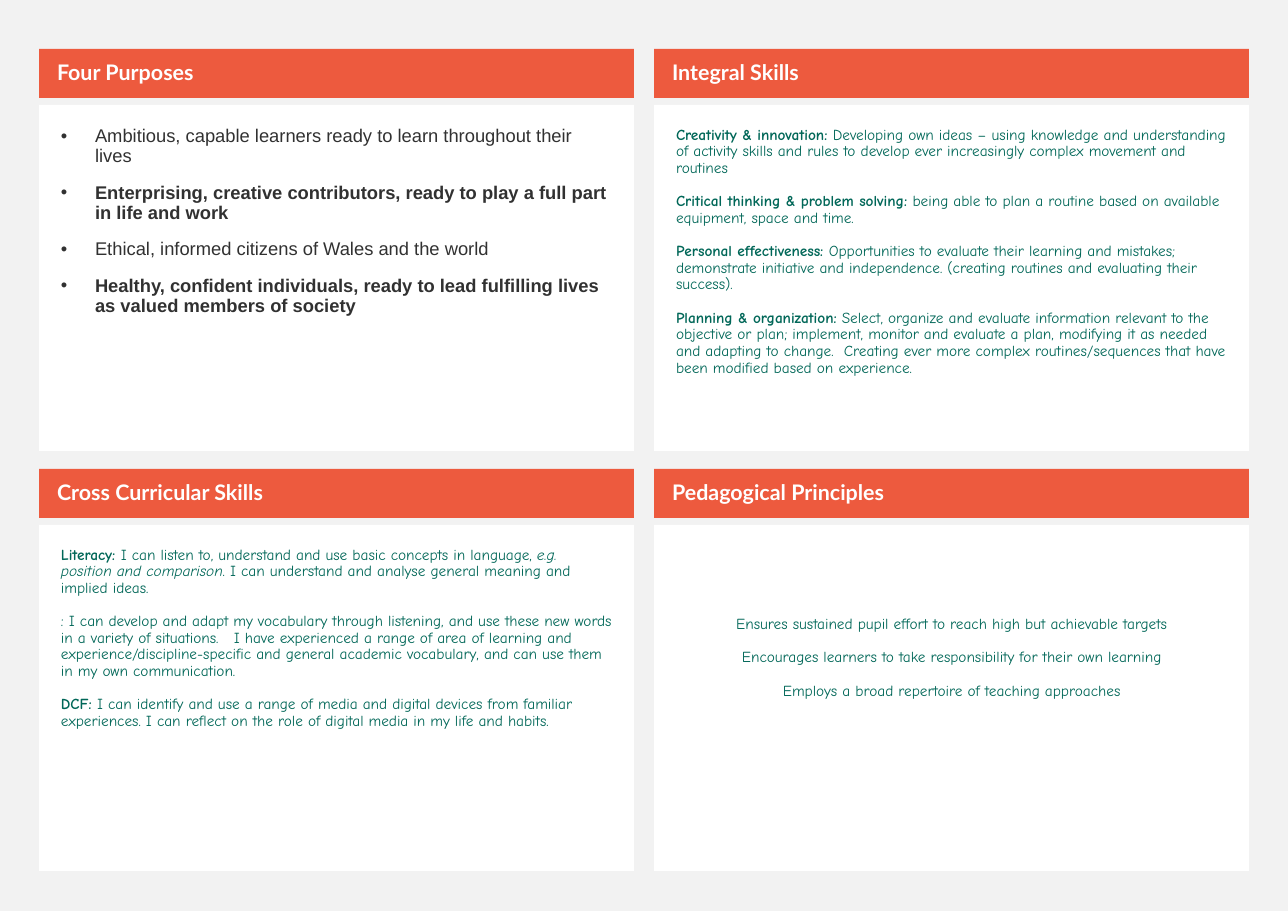
from dataclasses import dataclass

import lxml.etree
import pptx
import pptx.dml.color
import pptx.enum.text
import pptx.oxml.ns
import pptx.util

SCALE = 8298  # EMU in one px
WIDTH, HEIGHT = 1288, 911

# Panel grid, in px
COLS = (39, 654)
ROWS = (49, 469)
WIDE = 595
BAR = 49
DROP = 56
DEEP = 346
PAD = 22
INDENT = 34

ALIGN = pptx.enum.text.PP_ALIGN
ANCHOR = pptx.enum.text.MSO_ANCHOR


@dataclass(frozen=True)
class Style:
    face: str
    size: int
    ink: str
    fill: str


class Theme:
    back = "F2F2F2"
    head = Style("Lato", 14, "FFFFFF", "ED5A3E")
    plain = Style("Arial", 12, "313131", "FFFFFF")
    comic = Style("Comic Neue", 10, "006758", "FFFFFF")
    lead = 0.9
    gap = 11


# Each paragraph is a list of (text, mark); mark is "b", "i" or ""
PURPOSES = [
    [("Ambitious, capable learners ready to learn throughout their lives", "")],
    [("Enterprising, creative contributors, ready to play a full part in life and work", "b")],
    [("Ethical, informed citizens of Wales and the world", "")],
    [("Healthy, confident individuals, ready to lead fulfilling lives as valued members of society", "b")],
]
INTEGRAL = [
    [("Creativity & innovation: ", "b"),
     ("Developing own ideas – using knowledge and understanding of activity skills and rules "
      "to develop ever increasingly complex movement and routines", "")],
    [("Critical thinking & problem solving: ", "b"),
     ("being able to plan a routine based on available equipment, space and time.", "")],
    [("Personal effectiveness: ", "b"),
     ("Opportunities to evaluate their learning and mistakes; demonstrate initiative and "
      "independence. (creating routines and evaluating their success).", "")],
    [("Planning & organization:", "b"),
     (" Select, organize and evaluate information relevant to the objective or plan; implement, "
      "monitor and evaluate a plan, modifying it as needed and adapting to change.  Creating "
      "ever more complex routines/sequences that have been modified based on experience.", "")],
]
CROSS = [
    [("Literacy: ", "b"),
     ("I can listen to, understand and use basic concepts in language, ", ""),
     ("e.g. position and comparison", "i"),
     (". I can understand and analyse general meaning and implied ideas.", "")],
    [(": I can develop and adapt my vocabulary through listening, and use these new words in a "
      "variety of situations.   I have experienced a range of area of learning and "
      "experience/discipline-specific and general academic vocabulary, and can use them in my "
      "own communication.", "")],
    [("DCF: ", "b"),
     ("I can identify and use a range of media and digital devices from familiar experiences. "
      "I can reflect on the role of digital media in my life and habits.", "")],
]
TEACHING = [
    [("Ensures sustained pupil effort to reach high but achievable targets", "")],
    [("Encourages learners to take responsibility for their own learning", "")],
    [("Employs a broad repertoire of teaching approaches", "")],
]


def px(count):
    return pptx.util.Emu(count * SCALE)


def color(code):
    return pptx.dml.color.RGBColor.from_string(code)


def set_bullet(para, bullet):
    """Give the paragraph a hanging bullet, or none."""
    props = para._p.get_or_add_pPr()
    props.set("marL", str(px(INDENT) if bullet else 0))
    props.set("indent", str(-px(INDENT) if bullet else 0))
    tag = "a:buChar" if bullet else "a:buNone"
    mark = lxml.etree.SubElement(props, pptx.oxml.ns.qn(tag))
    if bullet:
        mark.set("char", "•")


def fill_para(para, parts, style, align, bullet):
    set_bullet(para, bullet)
    para.alignment = align
    para.line_spacing = Theme.lead
    para.space_before = pptx.util.Pt(Theme.gap)
    para.font.name = style.face
    para.font.size = pptx.util.Pt(style.size)
    para.font.color.rgb = color(style.ink)
    for text, mark in parts:
        run = para.add_run()
        run.text = text
        font = para.font if len(parts) == 1 else run.font
        font.bold = mark == "b"
        font.italic = mark == "i"


def add_block(slide, slot, box, pads, paras, style, anchor, align=ALIGN.LEFT, bullet=False):
    """Fill a placeholder, or a text box where slot is None."""
    left, top, wide, high = map(px, box)
    if slot is None:
        shape = slide.shapes.add_textbox(left, top, wide, high)
    else:
        shape = slide.placeholders[slot]
        shape.left, shape.top, shape.width, shape.height = left, top, wide, high
    shape.fill.solid()
    shape.fill.fore_color.rgb = color(style.fill)

    frame = shape.text_frame
    frame.word_wrap = True
    frame.auto_size = pptx.enum.text.MSO_AUTO_SIZE.NONE
    frame.vertical_anchor = anchor
    (frame.margin_left, frame.margin_top,
     frame.margin_right, frame.margin_bottom) = map(px, pads)
    for place, parts in enumerate(paras):
        para = frame.add_paragraph() if place else frame.paragraphs[0]
        fill_para(para, parts, style, align, bullet)


def add_head(slide, slot, left, top, title):
    add_block(slide, slot, (left, top, WIDE, BAR), (18, 6, 11, 6),
              [[(title, "b")]], Theme.head, ANCHOR.MIDDLE)


def add_body(slide, slot, left, top, paras, style, extra=0, **look):
    add_block(slide, slot, (left, top + DROP, WIDE, DEEP), (PAD, PAD + extra, PAD, PAD),
              paras, style, ANCHOR.TOP, **look)


def main():
    deck = pptx.Presentation()
    deck.slide_width, deck.slide_height = px(WIDTH), px(HEIGHT)
    slide = deck.slides.add_slide(deck.slide_layouts.get_by_name("Comparison"))
    slide.background.fill.solid()
    slide.background.fill.fore_color.rgb = color(Theme.back)

    # Head slot, body slot, title, text, style and look of each panel
    panels = [
        (0, 2, "Four Purposes", PURPOSES, Theme.plain, {"bullet": True}),
        (1, 4, "Integral Skills", INTEGRAL, Theme.comic, {}),
        (3, None, "Cross Curricular Skills", CROSS, Theme.comic, {}),
        (None, None, "Pedagogical Principles", TEACHING, Theme.comic,
         {"align": ALIGN.CENTER, "extra": 69}),
    ]
    for place, (head, body, title, paras, style, look) in enumerate(panels):
        row, col = divmod(place, len(COLS))
        add_head(slide, head, COLS[col], ROWS[row], title)
        add_body(slide, body, COLS[col], ROWS[row], paras, style, **look)

    deck.save("out.pptx")


if __name__ == "__main__":
    main()
